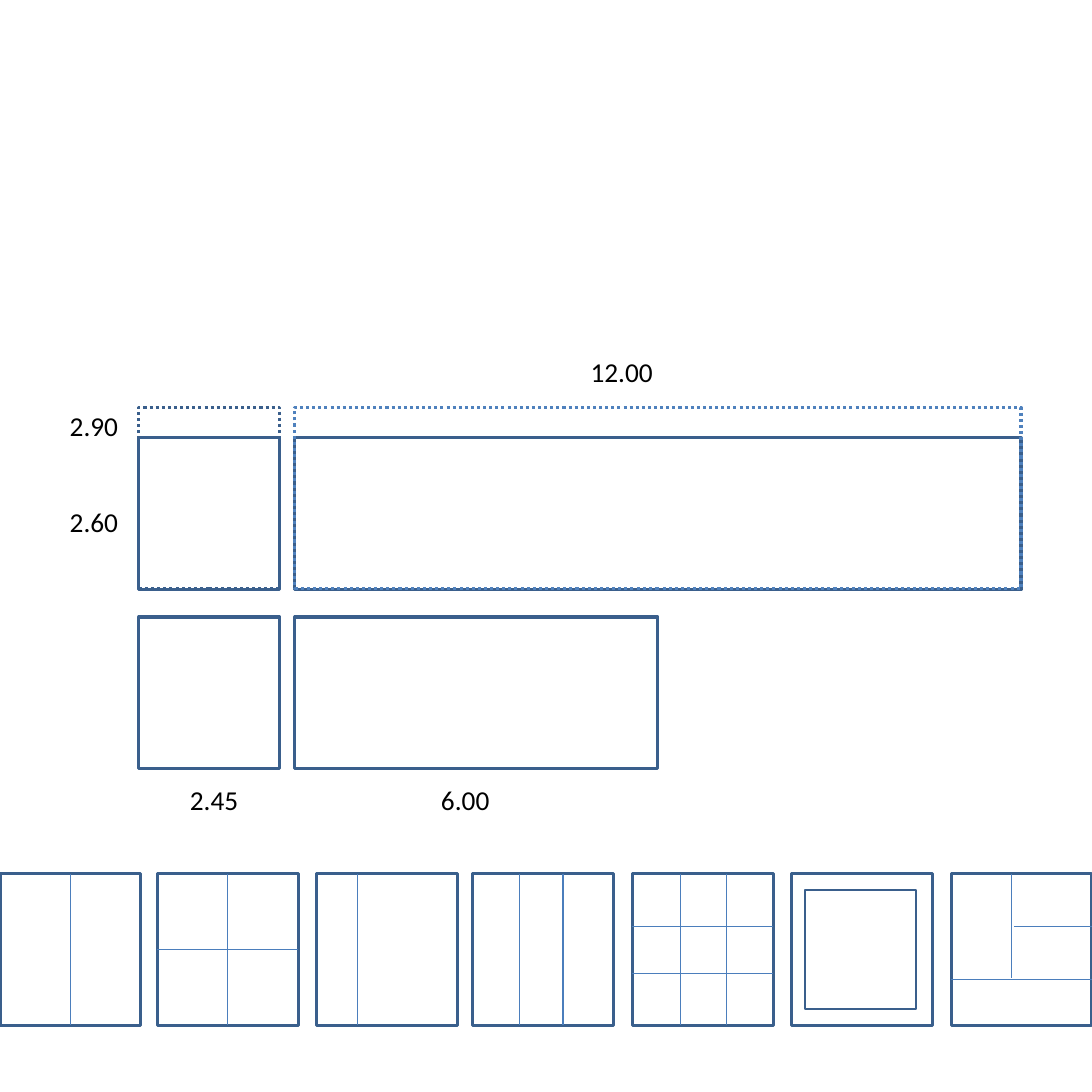
from pptx import Presentation
from pptx import util as u
from pptx.dml.color import RGBColor
from pptx.enum import dml, shapes, text
from pptx.oxml.ns import qn
from lxml import etree

OUTLINE = RGBColor(0x3A, 0x5F, 0x8C)
ACCENT = RGBColor(0x4F, 0x81, 0xBD)
DIVIDER = RGBColor(0x4B, 0x7E, 0xBC)
BLACK = RGBColor(0, 0, 0)

SLIDE_SIZE = 10
PANEL_WIDTH, PANEL_HEIGHT = 1.29, 1.39
NARROW_LEFT, WIDE_LEFT = 1.27, 2.7
FULL_WIDTH = 6.65
UPPER_TOP, LOWER_TOP, TILE_TOP = 4.01, 5.65, 8
DOTTED_TOP, DOTTED_HEIGHT = 3.73, 1.66
LABEL_WIDTH, LABEL_HEIGHT = 1.04, 0.4
TOP, LEFT, BOTTOM, RIGHT = range(4)

# Each tile: left edge, then dividers as (x1, y1, x2, y2) shares of the tile
TILES = [
    (0, [(0.5, 0, 0.5, 1)]),
    (1.44, [(0.5, 0, 0.5, 1), (0, 0.5, 1, 0.5)]),
    (2.9, [(0.29, 0, 0.29, 1)]),
    (4.33, [(x, 0, x, 1) for x in (0.33, 0.64)]),
    (5.79, [(x, 0, x, 1) for x in (0.34, 0.67)]
     + [(0, y, 1, y) for y in (0.35, 0.66)]),
    (7.25, []),
    (8.71, [(0.43, 0, 0.43, 0.69), (0, 0.7, 1, 0.7), (0.45, 0.35, 1, 0.35)]),
]
INSET_TILE = 5
SIDE_MIDDLES = {(0.5, 0): TOP, (0, 0.5): LEFT, (0.5, 1): BOTTOM, (1, 0.5): RIGHT}

LABELS = [
    ("2.90", 0.54, 3.7, {}),
    ("2.60", 0.54, 4.58, {}),
    ("12.00", 5.31, 3.2, {}),
    ("6.00", 3.94, 7.12, {}),
    ("2.45", 1.44, 7.12, {"align": text.PP_ALIGN.CENTER}),
]


def add_panel(slide, left, top, width=PANEL_WIDTH, height=PANEL_HEIGHT,
              color=OUTLINE, weight=2, dotted=False):
    panel = slide.shapes.add_shape(
        shapes.MSO_SHAPE.RECTANGLE,
        *map(u.Inches, (left, top, width, height)))
    panel.shadow.inherit = False
    panel.fill.background()
    panel.line.color.rgb = color
    panel.line.width = u.Pt(weight)
    if dotted:
        panel.line.dash_style = dml.MSO_LINE.ROUND_DOT
    return panel


def add_divider(slide, tile, x1, y1, x2, y2):
    """Draw a line across a tile, joined to it at the middle of a side."""
    divider = slide.shapes.add_connector(
        shapes.MSO_CONNECTOR.STRAIGHT,
        int(tile.left + x1 * tile.width), int(tile.top + y1 * tile.height),
        int(tile.left + x2 * tile.width), int(tile.top + y2 * tile.height))
    divider.line.color.rgb = DIVIDER
    divider.line.width = u.Pt(0.75)
    etree.SubElement(divider._element.spPr, qn("a:effectLst"))
    if (x1, y1) in SIDE_MIDDLES:
        divider.begin_connect(tile, SIDE_MIDDLES[x1, y1])
    if (x2, y2) in SIDE_MIDDLES:
        divider.end_connect(tile, SIDE_MIDDLES[x2, y2])


def add_label(slide, words, left, top, size=18, color=BLACK,
              align=text.PP_ALIGN.LEFT):
    box = slide.shapes.add_textbox(
        *map(u.Inches, (left, top, LABEL_WIDTH, LABEL_HEIGHT)))
    frame = box.text_frame
    frame.word_wrap = True
    frame.auto_size = text.MSO_AUTO_SIZE.SHAPE_TO_FIT_TEXT
    paragraph = frame.paragraphs[0]
    paragraph.text = words
    paragraph.alignment = align
    paragraph.font.name = "Calibri"
    paragraph.font.size = u.Pt(size)
    paragraph.font.color.rgb = color


def main():
    presentation = Presentation()
    presentation.slide_width = presentation.slide_height = u.Inches(SLIDE_SIZE)
    slide = presentation.slides.add_slide(presentation.slide_layouts[6])

    for top, wide_width in ((LOWER_TOP, FULL_WIDTH / 2), (UPPER_TOP, FULL_WIDTH)):
        add_panel(slide, NARROW_LEFT, top)
        add_panel(slide, WIDE_LEFT, top, wide_width)
    add_panel(slide, NARROW_LEFT, DOTTED_TOP, height=DOTTED_HEIGHT, dotted=True)
    add_panel(slide, WIDE_LEFT, DOTTED_TOP, FULL_WIDTH, DOTTED_HEIGHT,
              color=ACCENT, dotted=True)

    tiles = [add_panel(slide, left, TILE_TOP) for left, _ in TILES]
    for tile, (_, dividers) in zip(tiles, TILES):
        for divider in dividers:
            add_divider(slide, tile, *divider)
    add_panel(slide, TILES[INSET_TILE][0] + 0.12, TILE_TOP + 0.15,
              1.02, 1.09, weight=1)

    for words, left, top, formatting in LABELS:
        add_label(slide, words, left, top, **formatting)

    presentation.save("out.pptx")


if __name__ == "__main__":
    main()
